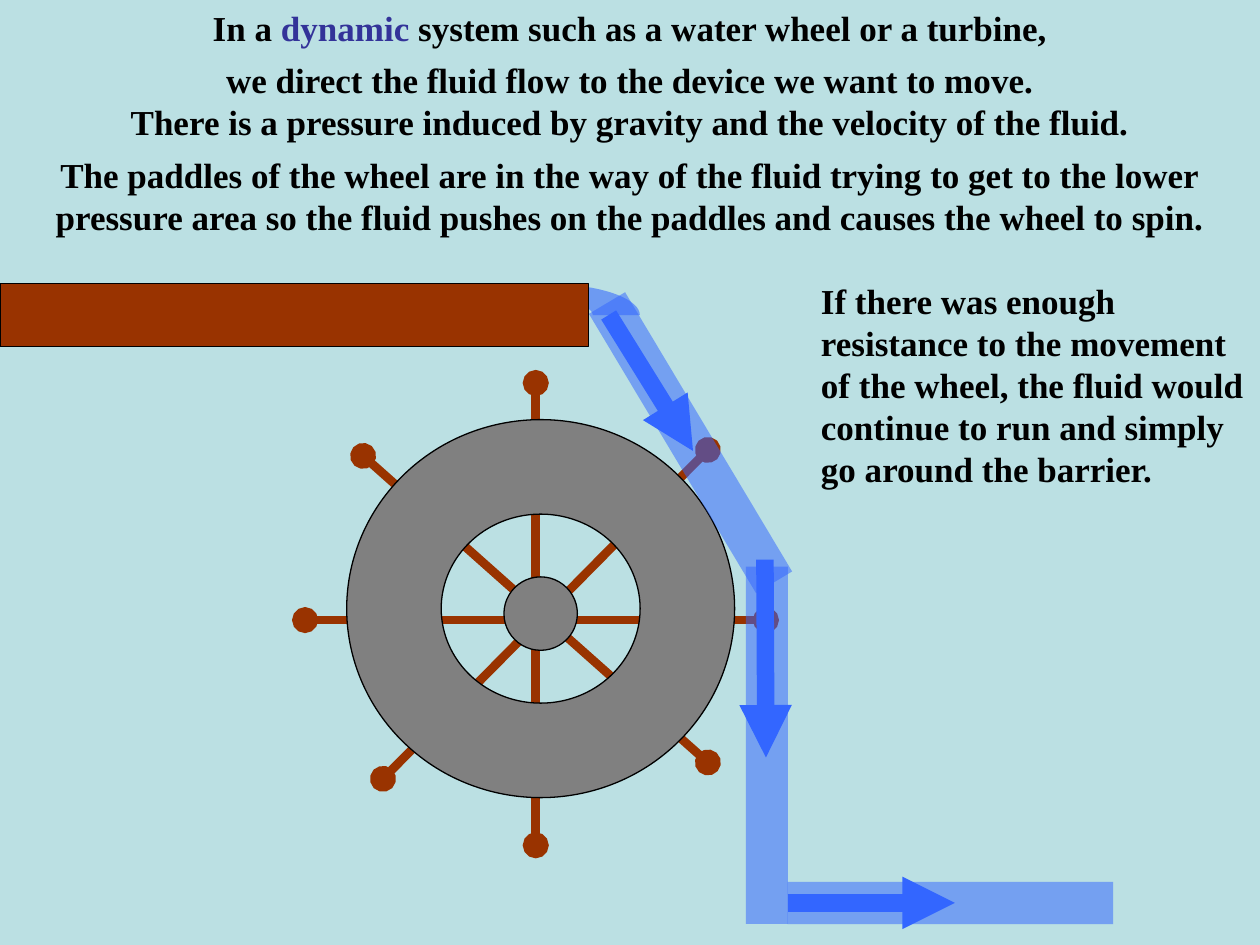
from dataclasses import dataclass
from math import cos, radians, sin

from lxml.etree import SubElement
from pptx import Presentation
from pptx.dml.color import RGBColor
from pptx.enum.shapes import MSO_CONNECTOR as Connector, MSO_SHAPE as Preset
from pptx.enum.text import PP_ALIGN as Align
from pptx.oxml.ns import qn
from pptx.util import Cm, Pt


@dataclass(frozen=True)
class Theme:
    background: str = "BBE0E3"
    text: str = "000000"
    accent: str = "333399"
    wood: str = "993300"
    metal: str = "808080"
    water: str = "3366FF"
    outline: str = "000000"
    font: str = "Times New Roman"
    text_size: float = 20
    outline_width: float = 0.75
    spoke_width: float = 5
    arrow_width: float = 10


@dataclass(frozen=True)
class Box:
    left: float
    top: float
    width: float
    height: float
    rotation: float = 0

    def lengths(self) -> tuple:
        return Cm(self.left), Cm(self.top), Cm(self.width), Cm(self.height)


@dataclass(frozen=True)
class Line:
    x1: float
    y1: float
    x2: float
    y2: float


@dataclass(frozen=True)
class TextBlock:
    box: Box
    runs: tuple
    align: Align = Align.CENTER


THEME = Theme()
STREAM_OPACITY = 52
SPILL_OPACITY = 57

SPOKES = (
    Line(6.15, 12.5, 15.44, 12.5),
    Line(10.8, 17.04, 10.8, 7.72),
    Line(7.72, 15.7, 14.27, 9.07),
    Line(14.27, 15.37, 7.32, 9.19),
)
WHEEL = Box(6.99, 8.46, 7.82, 7.62)
HUB = Box(10.16, 11.63, 1.48, 1.48)
FALL_ARROWS = (
    Line(12.27, 6.35, 13.97, 9.09),
    Line(15.42, 11.28, 15.44, 15.27),
)
OUTFLOW_ARROW = Line(15.88, 18.2, 19.25, 18.2)
STREAMS = (
    Box(10.64, 8.5, 6.56, 0.85, 59.1),
    Box(11.86, 14.6, 7.2, 0.85, 90),
    Box(15.88, 17.78, 6.56, 0.85),
)
SPILL = Box(9.1, 5.72, 3.8, 1.27)
CHANNEL = Box(0, 5.72, 11.86, 1.27)

TEXTS = (
    TextBlock(Box(0, 0, 25.4, 1.1), (
        ("In a ", THEME.text),
        ("dynamic", THEME.accent),
        (" system such as a water wheel or a turbine,", THEME.text),
    )),
    TextBlock(Box(0, 1.06, 25.4, 1.1), (
        ("we direct the fluid flow to the device we want to move.", THEME.text),
    )),
    TextBlock(Box(0, 1.9, 25.4, 1.1), (
        ("There is a pressure induced by gravity and the velocity of the fluid.", THEME.text),
    )),
    TextBlock(Box(0, 2.96, 25.4, 1.96), (
        ("The paddles of the wheel are in the way of the fluid trying to get to the lower "
         "pressure area so the fluid pushes on the paddles and causes the wheel to spin.", THEME.text),
    )),
    TextBlock(Box(16.3, 5.5, 9.1, 4.5), (
        ("If there was enough resistance to the movement of the wheel, the fluid would "
         "continue to run and simply go around the barrier.", THEME.text),
    ), Align.LEFT),
)


def color(value: str) -> RGBColor:
    return RGBColor.from_string(value)


def paint(shape, fill: str, opacity: int = 100, outlined: bool = False) -> None:
    shape.shadow.inherit = False
    shape.fill.solid()
    shape.fill.fore_color.rgb = color(fill)
    if opacity < 100:
        color_element = shape.element.spPr.find(qn("a:solidFill"))[0]
        SubElement(color_element, qn("a:alpha"), val=str(opacity * 1000))
    if outlined:
        shape.line.color.rgb = color(THEME.outline)
        shape.line.width = Pt(THEME.outline_width)
    else:
        shape.line.fill.background()


def add_preset(slide, preset: Preset, box: Box, fill: str, opacity: int = 100, outlined: bool = False):
    shape = slide.shapes.add_shape(preset, *box.lengths())
    shape.rotation = box.rotation
    paint(shape, fill, opacity, outlined)
    return shape


def add_line(slide, line: Line, stroke: str, width: float, **ends: str) -> None:
    connector = slide.shapes.add_connector(
        Connector.STRAIGHT, Cm(line.x1), Cm(line.y1), Cm(line.x2), Cm(line.y2))
    connector.line.color.rgb = color(stroke)
    connector.line.width = Pt(width)
    properties = connector.element.spPr
    for end, kind in ends.items():
        SubElement(properties.find(qn("a:ln")), qn(f"a:{end}"), type=kind)
    SubElement(properties, qn("a:effectLst"))


def add_arrow(slide, line: Line) -> None:
    add_line(slide, line, THEME.water, THEME.arrow_width, tailEnd="triangle")


def half_ring_points(box: Box, scale: float) -> list:
    radius_x, radius_y = box.width / 2, box.height / 2
    return [
        (Cm(box.left + radius_x * (1 - scale * cos(radians(angle)))),
         Cm(box.top + radius_y * (1 - scale * sin(radians(angle)))))
        for angle in range(0, 181, 5)
    ]


def add_spill(slide, box: Box) -> None:
    outer = half_ring_points(box, 1)
    inner = half_ring_points(box, 0.5)
    builder = slide.shapes.build_freeform(*outer[0], scale=1.0)
    builder.add_line_segments(outer[1:] + inner[::-1], close=True)
    paint(builder.convert_to_shape(), THEME.water, SPILL_OPACITY)


def add_text(slide, block: TextBlock) -> None:
    frame = slide.shapes.add_textbox(*block.box.lengths()).text_frame
    frame.word_wrap = True
    paragraph = frame.paragraphs[0]
    paragraph.alignment = block.align
    paragraph.font.name = THEME.font
    paragraph.font.size = Pt(THEME.text_size)
    paragraph.font.bold = True
    for text, run_color in block.runs:
        run = paragraph.add_run()
        run.text = text
        run.font.color.rgb = color(run_color)


def main() -> None:
    presentation = Presentation()
    presentation.slide_width, presentation.slide_height = Cm(25.4), Cm(19.05)
    slide = presentation.slides.add_slide(presentation.slide_layouts.get_by_name("Blank"))
    slide.background.fill.solid()
    slide.background.fill.fore_color.rgb = color(THEME.background)

    for spoke in SPOKES:
        add_line(slide, spoke, THEME.wood, THEME.spoke_width, headEnd="oval", tailEnd="oval")
    add_preset(slide, Preset.DONUT, WHEEL, THEME.metal, outlined=True)
    add_preset(slide, Preset.OVAL, HUB, THEME.metal, outlined=True)
    for arrow in FALL_ARROWS:
        add_arrow(slide, arrow)
    for stream in STREAMS:
        add_preset(slide, Preset.RECTANGLE, stream, THEME.water, STREAM_OPACITY)
    add_arrow(slide, OUTFLOW_ARROW)
    for block in TEXTS:
        add_text(slide, block)
    add_spill(slide, SPILL)
    add_preset(slide, Preset.RECTANGLE, CHANNEL, THEME.wood, outlined=True)

    presentation.save("out.pptx")


if __name__ == "__main__":
    main()
